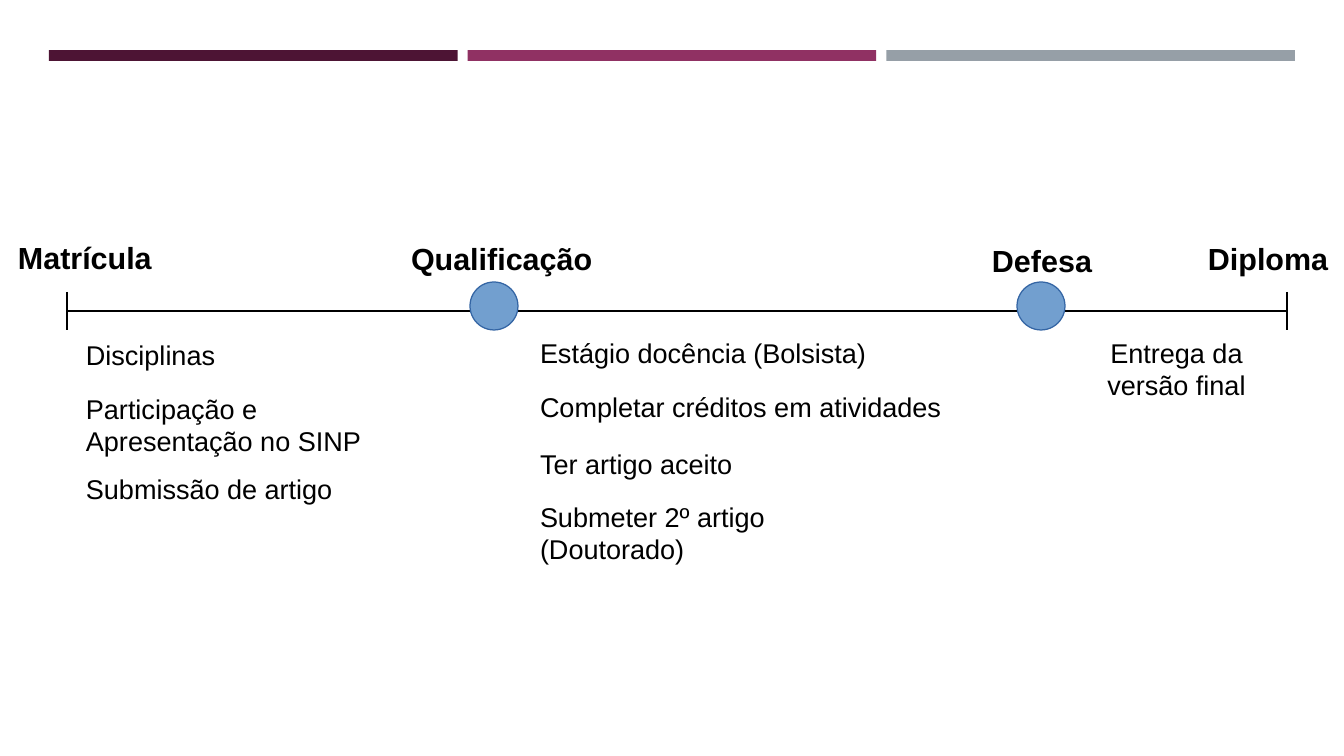
from pptx import Presentation
from pptx.dml.color import RGBColor
from pptx.enum.shapes import MSO_CONNECTOR, MSO_SHAPE
from pptx.enum.text import PP_ALIGN
from pptx.oxml.ns import qn
from pptx.util import Emu, Pt
from lxml import etree

RECT, OVAL = MSO_SHAPE.RECTANGLE, MSO_SHAPE.OVAL
LINE = MSO_CONNECTOR.STRAIGHT
LEFT, MID = PP_ALIGN.LEFT, PP_ALIGN.CENTER
UNIT = 914400 / 122

THEME = {
    "bars": ["4D1434", "903163", "969FA7"],
    "ink": "000000",
    "dot": "729FCF",
    "rim": "3465A4",
    "stroke": 0.75,
    "head": {"name": "Arial", "size": Pt(18), "bold": True},
    "body": {"name": "Arial", "size": Pt(16), "bold": False},
}

# Milestones: text, left and top from the axis start, width
HEADS = [
    ("Matrícula", -61, -78, 164),
    ("Qualificação", 332, -77, 211),
    ("Defesa", 913, -75, 126),
    ("Diploma", 1129, -77, 148),
]
# Phases: left from the axis start, alignment, then text, top, width, rows
PHASES = [
    (7, LEFT, [
        ("Disciplinas", 21, 268, 1),
        ("Participação e Apresentação no SINP", 75, 307, 2),
        ("Submissão de artigo", 155, 298, 1),
    ]),
    (461, LEFT, [
        ("Estágio docência (Bolsista)", 19, 375, 1),
        ("Completar créditos em atividades", 73, 440, 1),
        ("Ter artigo aceito", 130, 355, 1),
        ("Submeter 2º artigo (Doutorado)", 183, 375, 2),
    ]),
    (1009, MID, [("Entrega da versão final", 19, 201, 2)]),
]
DOTS = [427, 974]


def px(*vals):
    return [Emu(round(v * UNIT)) for v in vals]


def rgb(code):
    return RGBColor.from_string(code)


def shape(slide, kind, box, fill, rim=None):
    item = slide.shapes.add_shape(kind, *px(*box))
    item.shadow.inherit = False
    item.fill.solid()
    item.fill.fore_color.rgb = rgb(fill)
    if rim:
        item.line.color.rgb = rgb(rim)
        item.line.width = Pt(THEME["stroke"])
    else:
        item.line.fill.background()


def line(slide, *ends):
    item = slide.shapes.add_connector(LINE, *px(*ends))
    item.line.color.rgb = rgb(THEME["ink"])
    item.line.width = Pt(THEME["stroke"])
    props = item._element.find(qn("p:spPr"))
    etree.SubElement(props, qn("a:effectLst"))


def label(slide, text, box, style, align=LEFT):
    frame = slide.shapes.add_textbox(*px(*box)).text_frame
    frame.word_wrap = True
    para = frame.paragraphs[0]
    para.alignment = align
    run = para.add_run()
    run.text = text
    for key, val in THEME[style].items():
        setattr(run.font, key, val)
    run.font.color.rgb = rgb(THEME["ink"])


def banner(slide, left, top, width, height, gap=10):
    # Three equal bars across the top
    count = len(THEME["bars"])
    size = (width - gap * (count - 1)) / count
    for i, fill in enumerate(THEME["bars"]):
        shape(slide, RECT, (left + i * (size + gap), top, size, height), fill)


def axis(slide, left, top, width, tick=38, size=48, lift=5):
    # Axis with an end tick on each side
    line(slide, left, top, left + width, top)
    for x in (left, left + width):
        line(slide, x, top - tick / 2, x, top + tick / 2)
    # Milestone dots
    for x in DOTS:
        box = (left + x - size / 2, top - lift - size / 2, size, size)
        shape(slide, OVAL, box, THEME["dot"], THEME["rim"])
    # Milestone names
    for text, x, y, wide in HEADS:
        label(slide, text, (left + x, top + y, wide, 46), "head")
    # Tasks of each phase
    for x, align, tasks in PHASES:
        for text, y, wide, rows in tasks:
            box = (left + x, top + y, wide, 12 + 31 * rows)
            label(slide, text, box, "body", align)


def main():
    deck = Presentation()
    deck.slide_width, deck.slide_height = px(1344, 756)
    slide = deck.slides.add_slide(deck.slide_layouts[6])
    banner(slide, 49, 50, 1246, 11)
    axis(slide, 67, 311, 1220)
    deck.save("out.pptx")


if __name__ == "__main__":
    main()
